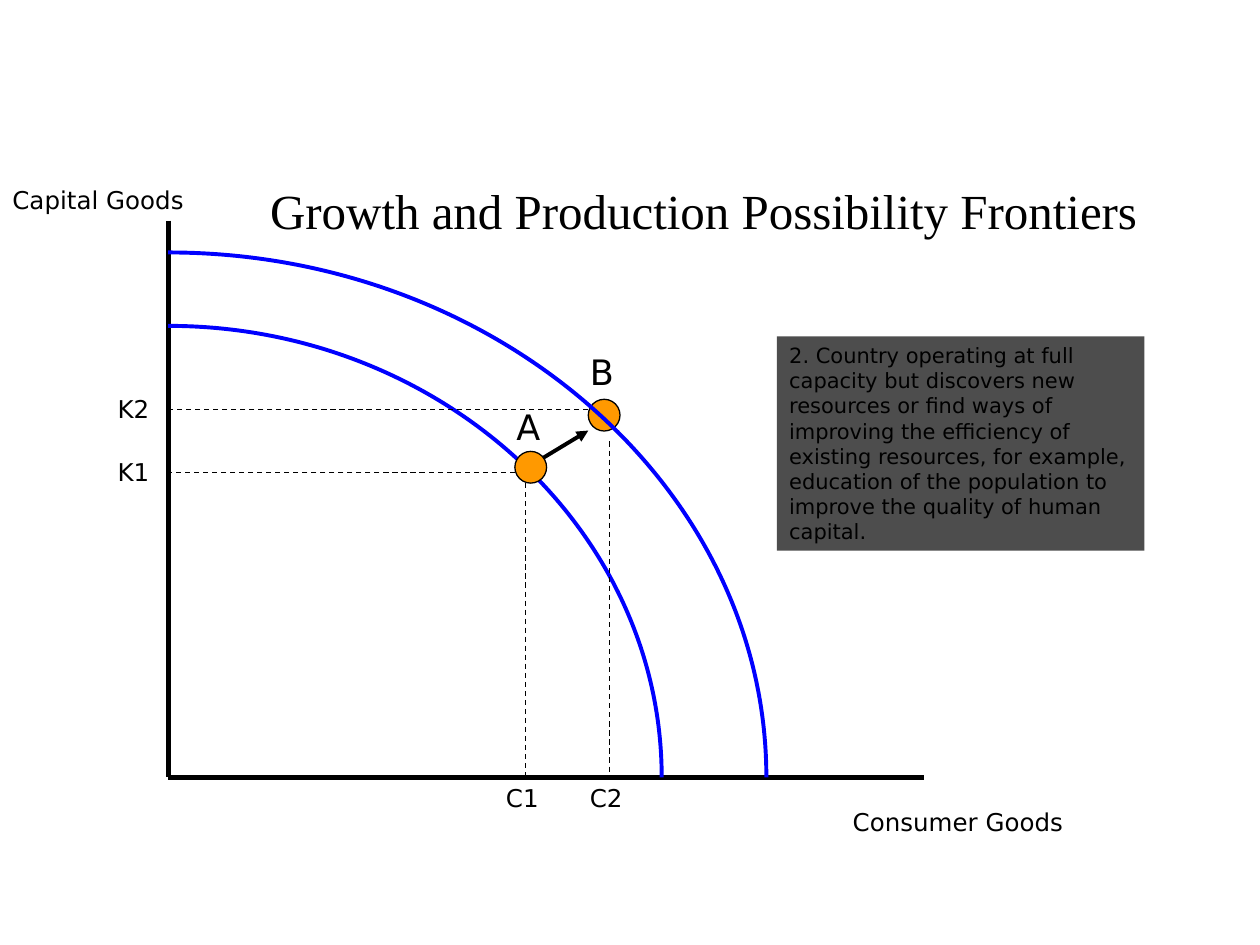
from dataclasses import dataclass

from pptx import Presentation
from pptx.dml.color import RGBColor
from pptx.enum.dml import MSO_LINE_DASH_STYLE as Dash
from pptx.enum.shapes import MSO_CONNECTOR as Connector, MSO_SHAPE as Shape
from pptx.enum.text import MSO_ANCHOR as Anchor, MSO_AUTO_SIZE as AutoSize, PP_ALIGN as Align
from pptx.oxml.ns import qn
from pptx.util import Cm, Pt
from lxml.etree import SubElement


@dataclass(frozen=True)
class Theme:
    """Colours, fonts and sizes of the slide."""
    ink: RGBColor = RGBColor(0, 0, 0)
    frontier: RGBColor = RGBColor(0, 0, 0xFF)
    point: RGBColor = RGBColor(0xFF, 0x99, 0)
    panel: RGBColor = RGBColor(0x4D, 0x4D, 0x4D)
    title_font: str = "Times New Roman"
    body_font: str = "DejaVu Sans"
    title_size: int = 28
    point_size: int = 20
    label_size: int = 14
    note_size: int = 12
    axis: float = 3
    curve: float = 2.25
    thin: float = 0.75


THEME = Theme()
NOTE = (
    "2. Country operating at full capacity but discovers new resources or find ways of "
    "improving the efficiency of existing resources, for example, education of the "
    "population to improve the quality of human capital."
)


def apply(target, values):
    """Set each named attribute of the target."""
    for name, value in values.items():
        setattr(target, name, value)


def write(shape, text, size, font=THEME.body_font, align=Align.LEFT, **frame_values):
    """Write one formatted paragraph into a shape."""
    frame = shape.text_frame
    apply(frame, {"word_wrap": True, "vertical_anchor": Anchor.TOP, **frame_values})
    para = frame.paragraphs[0]
    apply(para, {"alignment": align, "space_before": Pt(0)})
    span = para.add_run()
    apply(span, {"text": text})
    apply(span.font, {"name": font, "size": Pt(size)})
    span.font.color.rgb = THEME.ink


def stroke(line, colour, width, dash=None):
    """Colour and size an outline."""
    line.color.rgb = colour
    apply(line, {"width": Pt(width), "dash_style": dash})


def add_line(page, start, end, width, dash=None, arrow=False):
    """Draw a straight line between two points in centimetres."""
    line = page.shapes.add_connector(Connector.STRAIGHT, *map(Cm, (*start, *end)))
    stroke(line.line, THEME.ink, width, dash)
    properties = line._element.spPr
    if arrow:
        SubElement(properties.find(qn("a:ln")), qn("a:tailEnd"), type="triangle")
    SubElement(properties, qn("a:effectLst"))


def add_label(page, box, text, size, wrap=True):
    """Place a text label."""
    label = page.shapes.add_textbox(*map(Cm, box))
    write(label, text, size, word_wrap=wrap, auto_size=AutoSize.SHAPE_TO_FIT_TEXT)


def add_frontier(page, origin, radii, bend=0.55):
    """Draw a quarter ellipse around the origin as one Bézier segment."""
    reach = [(0, 1), (bend, 1), (1, bend), (1, 0)]
    points = [
        (Cm(origin[0] + radii[0] * across), Cm(origin[1] - radii[1] * up))
        for across, up in reach
    ]
    builder = page.shapes.build_freeform(*points[0])
    builder.add_line_segments(points[1:], close=False)
    curve = builder.convert_to_shape()
    segments = list(curve._element.iter(qn("a:lnTo")))
    bezier = SubElement(segments[0].getparent(), qn("a:cubicBezTo"))
    for segment in segments:
        bezier.append(segment[0])
        segment.getparent().remove(segment)
    curve.shadow.inherit = False
    curve.fill.background()
    stroke(curve.line, THEME.frontier, THEME.curve)


def add_point(page, left, top, size=0.64):
    """Draw an output point on a frontier."""
    point = page.shapes.add_shape(Shape.OVAL, Cm(left), Cm(top), Cm(size), Cm(size))
    point.shadow.inherit = False
    point.fill.solid()
    point.fill.fore_color.rgb = THEME.point
    stroke(point.line, THEME.ink, THEME.thin)


def add_title(page, box, text):
    """Place the title placeholder."""
    title = page.shapes.title
    apply(title, dict(zip(("left", "top", "width", "height"), map(Cm, box))))
    write(title, text, THEME.title_size, THEME.title_font, Align.CENTER,
          vertical_anchor=Anchor.MIDDLE, auto_size=AutoSize.NONE)


def add_graph(page, box):
    """Draw the axes, frontiers, points, guides and labels."""
    left, top, width, height = box
    origin = (left, top + height)
    add_line(page, (left, top), origin, THEME.axis)
    add_line(page, origin, (left + width, origin[1]), THEME.axis)
    add_frontier(page, origin, (9.95, 9.1))
    add_point(page, left + 8.47, top + 3.6)
    guides = [((6.99, 5.08), (7.2, 5.29)), ((8.47, 3.81), (8.89, 4.45))]
    for (across_x, across_y), (down_x, down_y) in guides:
        add_line(page, (left + across_x, top + across_y), (left, top + across_y),
                 THEME.thin, Dash.DASH)
        add_line(page, (left + down_x, top + down_y), (left + down_x, origin[1]),
                 THEME.thin, Dash.DASH)
    add_line(page, (left + 7.41, top + 4.87), (left + 8.47, top + 4.23),
             THEME.curve, arrow=True)
    add_point(page, left + 6.99, top + 4.65)
    add_frontier(page, origin, (12.06, 10.58))
    labels = [
        ("Capital Goods", -3.39, -0.85, 5.08, True),
        ("Consumer Goods", 13.55, 11.7, 4.75, False),
        ("K1", -1.27, 4.64, 1.17, False),
        ("K2", -1.27, 3.37, 1.17, False),
        ("C1", 6.56, 11.22, 1.48, True),
        ("C2", 8.25, 11.22, 1.17, False),
    ]
    for text, across, down, length, wrap in labels:
        add_label(page, (left + across, top + down, length, 0.85), text,
                  THEME.label_size, wrap)
    for text, across, down, length in (("A", 6.77, 3.6, 1.27), ("B", 8.25, 2.49, 1.06)):
        add_label(page, (left + across, top + down, length, 1.1), text, THEME.point_size)


def add_note(page, box, text):
    """Place the explanatory panel."""
    panel = page.shapes.add_shape(Shape.RECTANGLE, *map(Cm, box))
    panel.shadow.inherit = False
    panel.fill.solid()
    panel.fill.fore_color.rgb = THEME.panel
    panel.line.fill.background()
    write(panel, text, THEME.note_size, auto_size=AutoSize.SHAPE_TO_FIT_TEXT)


def main():
    """Build and save the deck."""
    deck = Presentation()
    apply(deck, {"slide_width": Cm(25.4), "slide_height": Cm(19.05)})
    page = deck.slides.add_slide(deck.slide_layouts.get_by_name("Title Only"))
    add_title(page, (3.39, 3.18, 21.59, 2.12), "Growth and Production Possibility Frontiers")
    add_graph(page, (3.39, 4.45, 15.24, 11.22))
    add_note(page, (15.66, 6.78, 7.41, 4.32), NOTE)
    deck.save("out.pptx")


if __name__ == "__main__":
    main()
